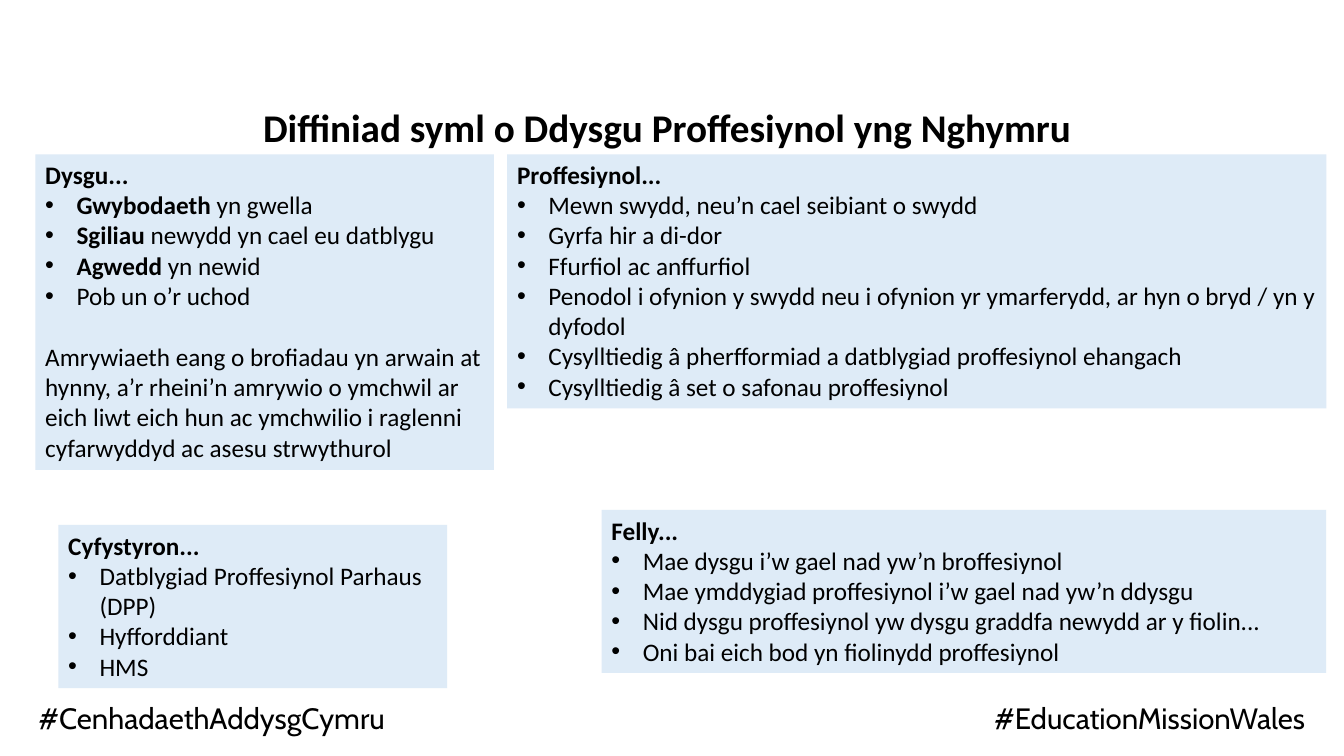
import pptx
import pptx.dml.color
import pptx.enum.shapes
import pptx.enum.text
import pptx.oxml
import pptx.oxml.ns
import pptx.util

Cm, Pt = pptx.util.Cm, pptx.util.Pt
ALIGN = pptx.enum.text.PP_ALIGN


def rgb(value):
    return pptx.dml.color.RGBColor.from_string(value)


class SlideBuilder:
    INK, PANEL = "000000", "DEEBF7"
    TITLE = {"name": "Calibri", "size": Pt(28), "bold": True}
    HEADING = {"name": "Calibri", "size": Pt(18), "bold": True}
    BODY = {"name": "Calibri", "size": Pt(18), "bold": False}
    HASHTAG = {"name": "Cabin", "size": Pt(21), "bold": False}
    INDENT = Cm(0.79)

    def __init__(self, slide):
        self.s = slide

    def run(self, p, text, style):
        r = p.add_run()
        r.text = text
        for key, value in style.items():
            setattr(r.font, key, value)
        r.font.color.rgb = rgb(self.INK)

    def frame(self, sp, **margins):
        tf = sp.text_frame
        settings = {"word_wrap": True,
                    "vertical_anchor": pptx.enum.text.MSO_ANCHOR.TOP, **margins}
        for key, value in settings.items():
            setattr(tf, key, value)
        return tf

    def label(self, box, text, style, align=ALIGN.LEFT, **margins):
        sp = self.s.shapes.add_textbox(*map(Cm, box))
        p = self.frame(sp, **margins).paragraphs[0]
        p.alignment = align
        self.run(p, text, style)

    def bullet(self, p):
        pPr = p._p.get_or_add_pPr()
        pPr.set("marL", str(self.INDENT))
        pPr.set("indent", str(-self.INDENT))
        ns = pptx.oxml.ns.nsdecls("a")
        for xml in (f'<a:buFont {ns} typeface="Arial"/>', f'<a:buChar {ns} char="•"/>'):
            pPr.append(pptx.oxml.parse_xml(xml))

    def panel(self, box, heading, items, closing=None):
        """Each item is plain text, or a (bold, plain) pair."""
        sp = self.s.shapes.add_shape(
            pptx.enum.shapes.MSO_SHAPE.RECTANGLE, *map(Cm, box))
        sp.shadow.inherit = False
        sp.fill.solid()
        sp.fill.fore_color.rgb = rgb(self.PANEL)
        sp.line.fill.background()
        tf = self.frame(sp)
        p = tf.paragraphs[0]
        p.alignment = ALIGN.LEFT
        self.run(p, heading, self.HEADING)
        for item in items:
            p = tf.add_paragraph()
            p.alignment = ALIGN.LEFT
            self.bullet(p)
            bold, plain = item if isinstance(item, tuple) else ("", item)
            if bold:
                self.run(p, bold, self.HEADING)
            self.run(p, plain, self.BODY)
        if closing:
            p = tf.add_paragraph()
            p.alignment = ALIGN.LEFT
            p.space_before = Pt(22)
            self.run(p, closing, self.BODY)


def main():
    prs = pptx.Presentation()
    prs.slide_width, prs.slide_height = Cm(33.87), Cm(19.05)
    b = SlideBuilder(prs.slides.add_slide(prs.slide_layouts[6]))

    # Title
    b.label((6.38, 2.49, 27, 1.45),
            "Diffiniad syml o Ddysgu Proffesiynol yng Nghymru", b.TITLE)

    # Definition panels
    b.panel((12.78, 3.89, 20.65, 6.4), "Proffesiynol...", [
        "Mewn swydd, neu’n cael seibiant o swydd",
        "Gyrfa hir a di-dor",
        "Ffurfiol ac anffurfiol",
        "Penodol i ofynion y swydd neu i ofynion yr ymarferydd, "
        "ar hyn o bryd / yn y dyfodol",
        "Cysylltiedig â pherfformiad a datblygiad proffesiynol ehangach",
        "Cysylltiedig â set o safonau proffesiynol",
    ])
    b.panel((0.89, 3.89, 11.56, 7.95), "Dysgu...", [
        ("Gwybodaeth ", "yn gwella"),
        ("Sgiliau ", "newydd yn cael eu datblygu"),
        ("Agwedd ", "yn newid"),
        "Pob un o’r uchod",
    ], closing="Amrywiaeth eang o brofiadau yn arwain at hynny, a’r rheini’n "
               "amrywio o ymchwil ar eich liwt eich hun ac ymchwilio i raglenni "
               "cyfarwyddyd ac asesu strwythurol")

    # Synonyms and conclusions
    b.panel((1.47, 13.23, 9.8, 4.11), "Cyfystyron...", [
        "Datblygiad Proffesiynol Parhaus (DPP)",
        "Hyfforddiant",
        "HMS",
    ])
    b.panel((15.16, 12.85, 18.26, 4.11), "Felly...", [
        "Mae dysgu i’w gael nad yw’n broffesiynol",
        "Mae ymddygiad proffesiynol i’w gael nad yw’n ddysgu",
        "Nid dysgu proffesiynol yw dysgu graddfa newydd ar y fiolin...",
        "Oni bai eich bod yn fiolinydd proffesiynol",
    ])

    # Hashtags
    margins = {"margin_left": Cm(0.18), "margin_right": Cm(0.18),
               "margin_top": Cm(0.1), "margin_bottom": Cm(0.1)}
    for left, top, text, align in (
            (0.79, 17.55, "#CenhadaethAddysgCymru", ALIGN.LEFT),
            (20.04, 17.53, "#EducationMissionWales", ALIGN.RIGHT)):
        b.label((left, top, 13.03, 1.09), text, b.HASHTAG, align, **margins)

    prs.save("out.pptx")


if __name__ == "__main__":
    main()
